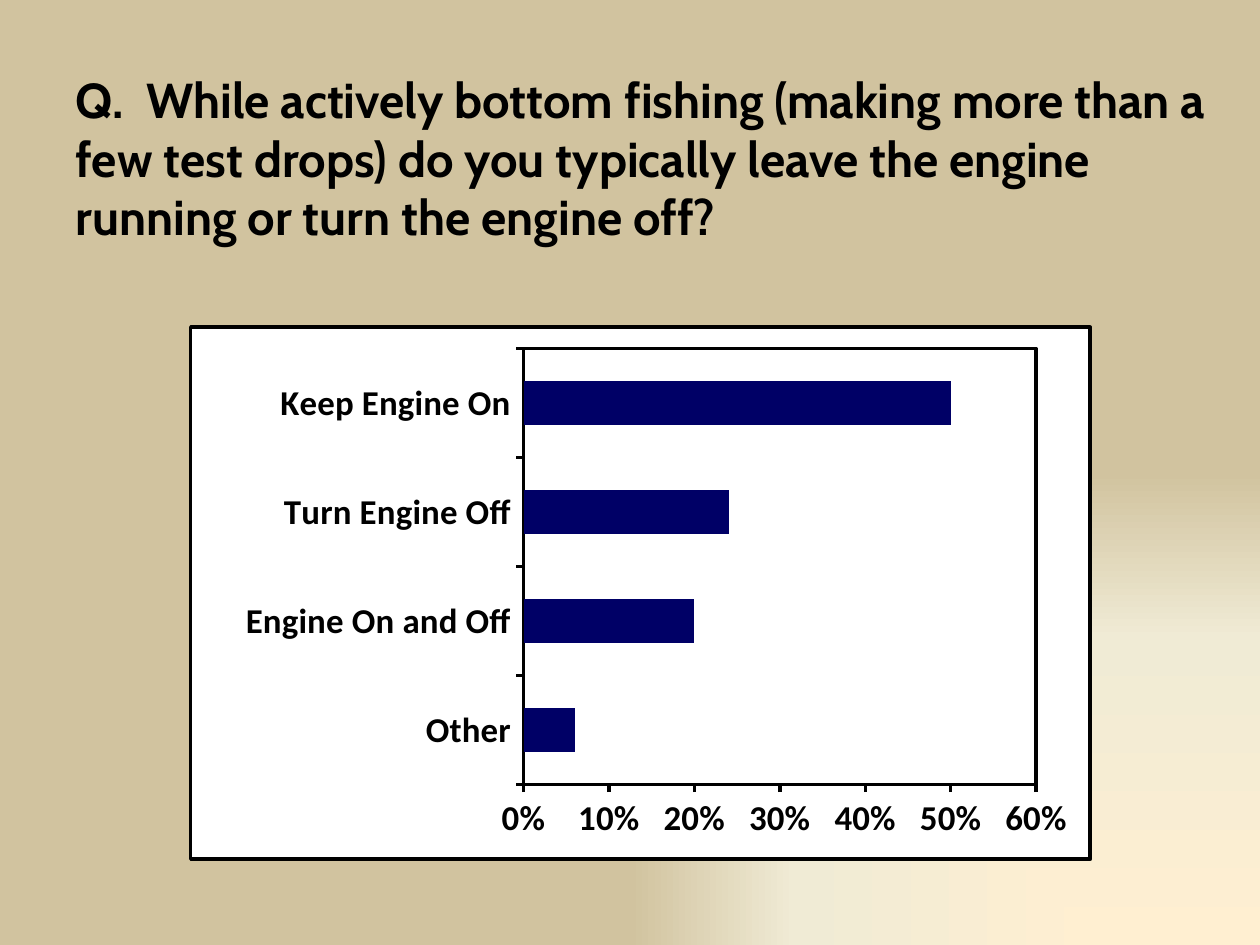
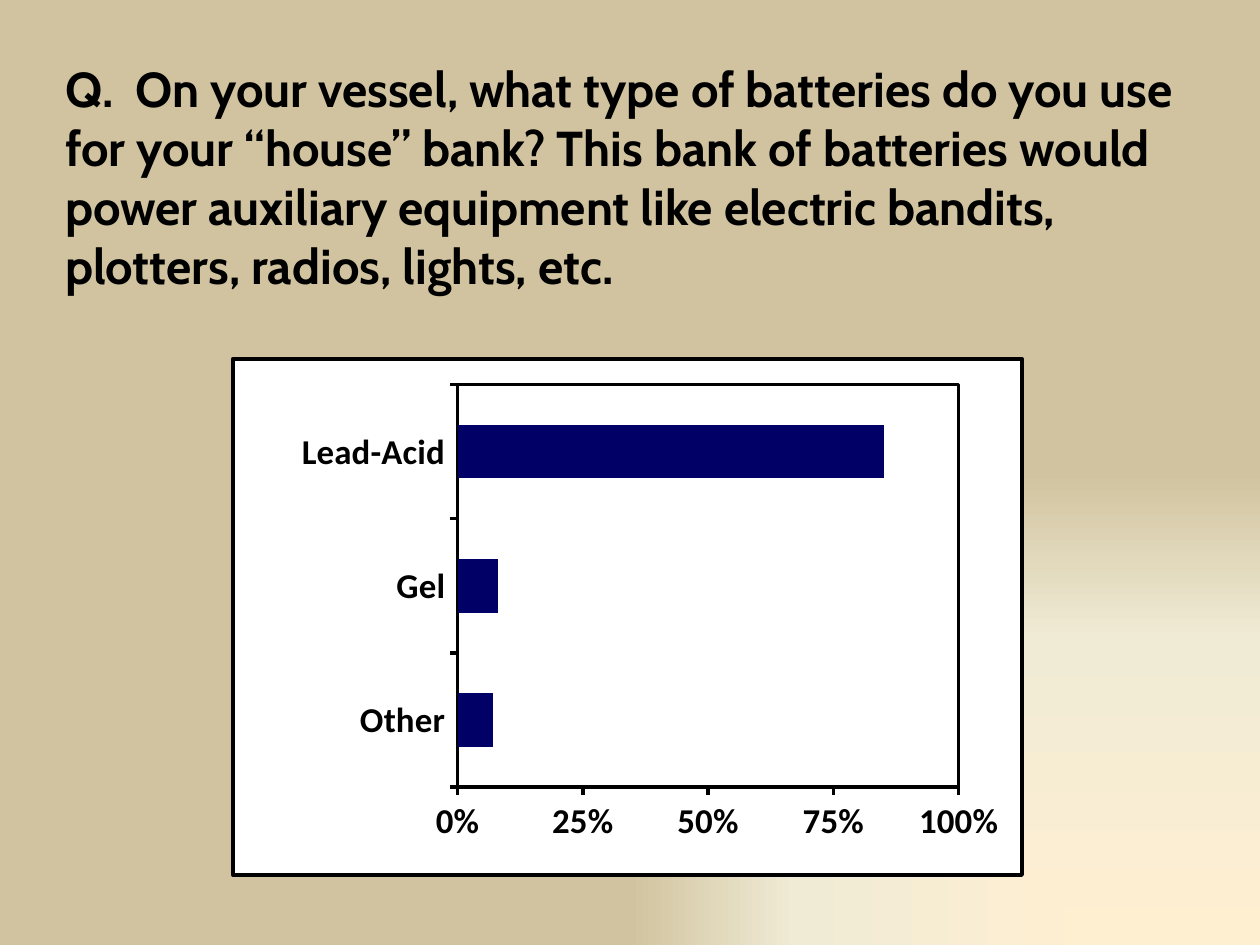
from lxml import etree
from pptx import Presentation
from pptx.chart.data import CategoryChartData
from pptx.dml.color import RGBColor
from pptx.enum.chart import XL_CHART_TYPE, XL_TICK_MARK
from pptx.enum.text import MSO_ANCHOR, MSO_AUTO_SIZE, PP_ALIGN
from pptx.oxml import parse_xml
from pptx.oxml.ns import nsdecls, qn
from pptx.util import Pt

BLACK = RGBColor(0, 0, 0)
WHITE = RGBColor(255, 255, 255)
NAVY = RGBColor(0, 0, 0x66)
CREAM = RGBColor(0xFF, 0xEF, 0xD1)
IVORY = RGBColor(0xF0, 0xEB, 0xD5)
SAND = RGBColor(0xD1, 0xC3, 0x9F)


def set_font(font, name, size, bold=False):
    font.name, font.size, font.bold = name, Pt(size), bold
    font.color.rgb = BLACK


def paint_back(master):
    """Corner gradient shared by all slides."""
    master.background.fill.gradient()
    old = next(master.element.iter(qn("a:gradFill")))
    stops = "".join(
        f'<a:gs pos="{pos * 1000}"><a:srgbClr val="{tone}"/></a:gs>'
        for pos, tone in ((0, CREAM), (65, IVORY), (100, SAND)))
    new = parse_xml(
        f'<a:gradFill {nsdecls("a")} rotWithShape="1"><a:gsLst>{stops}</a:gsLst>'
        '<a:path path="rect"><a:fillToRect l="100000" t="100000"/></a:path>'
        '</a:gradFill>')
    old.getparent().replace(old, new)


def add_title(slide, box, text):
    title = slide.shapes.title
    title.left, title.top, title.width, title.height = map(Pt, box)
    frame = title.text_frame
    frame.text = text
    frame.word_wrap = True
    frame.auto_size = MSO_AUTO_SIZE.NONE
    frame.vertical_anchor = MSO_ANCHOR.TOP
    para = frame.paragraphs[0]
    para.alignment = PP_ALIGN.LEFT
    set_font(para.runs[0].font, "Cabin", 28, True)


def frame_xml():
    """White fill with a black 2 pt border."""
    return parse_xml(
        f'<c:spPr {nsdecls("c", "a")}>'
        f'<a:solidFill><a:srgbClr val="{WHITE}"/></a:solidFill>'
        f'<a:ln w="{Pt(2)}"><a:solidFill><a:srgbClr val="{BLACK}"/></a:solidFill>'
        '</a:ln></c:spPr>')


def place_plot(area, plot):
    """Fix the inner plot box, given as fractions of the chart."""
    for old in area.findall(qn("c:layout")):
        area.remove(old)
    layout = parse_xml(f'<c:layout {nsdecls("c")}><c:manualLayout/></c:layout>')
    parts = [("layoutTarget", "inner"), ("xMode", "edge"), ("yMode", "edge")]
    parts += zip("xywh", plot)
    for tag, val in parts:
        etree.SubElement(layout[0], qn(f"c:{tag}")).set("val", str(val))
    area.insert(0, layout)


def style_axis(axis):
    axis.has_major_gridlines = False
    axis.major_tick_mark = XL_TICK_MARK.OUTSIDE
    axis.minor_tick_mark = XL_TICK_MARK.NONE
    axis.format.line.color.rgb = BLACK
    axis.format.line.width = Pt(2)
    set_font(axis.tick_labels.font, "Calibri", 20, True)


def add_bars(slide, box, plot, shares, top, step):
    data = CategoryChartData(number_format="0%")
    data.categories = list(shares)
    data.add_series("Series 1", list(shares.values()))
    chart = slide.shapes.add_chart(
        XL_CHART_TYPE.BAR_CLUSTERED, *map(Pt, box), data).chart
    chart.has_legend = chart.has_title = False
    set_font(chart.font, "Cambria", 10)

    # Axes
    for axis in (chart.category_axis, chart.value_axis):
        style_axis(axis)
    scale = chart.value_axis
    scale.minimum_scale, scale.maximum_scale = 0, top
    scale.major_unit = step
    scale.tick_labels.number_format = "0%"
    scale.tick_labels.number_format_is_linked = False

    # Bars
    bars = chart.plots[0]
    bars.gap_width = 150
    bars.vary_by_categories = False
    fill = bars.series[0].format.fill
    fill.solid()
    fill.fore_color.rgb = NAVY

    # Chart and plot frames
    body = chart.element.find(qn("c:chart"))
    body.addnext(frame_xml())
    area = body.find(qn("c:plotArea"))
    place_plot(area, plot)
    area.append(frame_xml())


def add_question(deck, corner, text, **bars):
    slide = deck.slides.add_slide(deck.slide_layouts[5])
    add_bars(slide, **bars)
    add_title(slide, (corner, corner, 660, 48), text)


def main():
    deck = Presentation()
    deck.slide_width, deck.slide_height = Pt(720), Pt(540)
    paint_back(deck.slide_master)

    add_question(
        deck, 36,
        "Q.  While actively bottom fishing (making more than a few test drops) "
        "do you typically leave the engine running or turn the engine off?",
        box=(108, 186, 516, 306), plot=(0.37, 0.04, 0.57, 0.82),
        shares={"Other": 0.06, "Engine On and Off": 0.2,
                "Turn Engine Off": 0.24, "Keep Engine On": 0.5},
        top=0.6, step=0.1)

    add_question(
        deck, 30,
        "Q.  On your vessel, what type of batteries do you use for your "
        "“house” bank? This bank of batteries would power auxiliary equipment "
        "like electric bandits, plotters, radios, lights, etc.",
        box=(132, 204, 453, 297), plot=(0.285, 0.05, 0.635, 0.78),
        shares={"Other": 0.07, "Gel": 0.08, "Lead-Acid": 0.85},
        top=1, step=0.25)

    deck.save("out.pptx")


if __name__ == "__main__":
    main()
